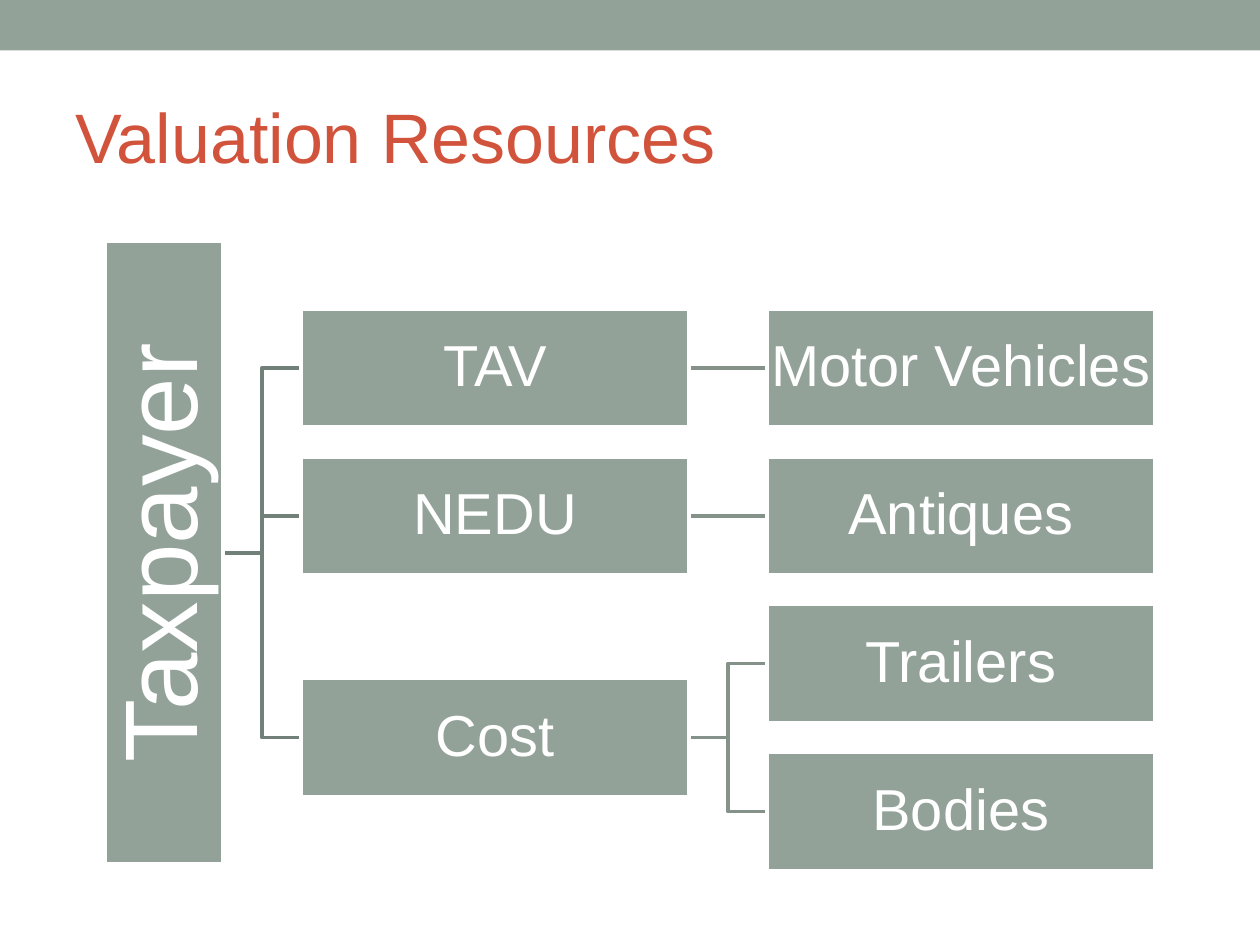
from lxml import etree
from pptx import Presentation
from pptx.dml.color import RGBColor
from pptx.enum.shapes import MSO_CONNECTOR, MSO_SHAPE
from pptx.enum.text import MSO_ANCHOR, PP_ALIGN
from pptx.oxml.ns import qn
from pptx.util import Cm, Pt

RECTANGLE = MSO_SHAPE.RECTANGLE
STRAIGHT, ELBOW = MSO_CONNECTOR.STRAIGHT, MSO_CONNECTOR.ELBOW
MIDDLE = MSO_ANCHOR.MIDDLE
LEFT, CENTER = PP_ALIGN.LEFT, PP_ALIGN.CENTER

SAGE = RGBColor(0x93, 0xA2, 0x99)
ROOT_LINE = RGBColor(0x71, 0x80, 0x79)
BRANCH_LINE = RGBColor(0x84, 0x92, 0x8A)
RUST = RGBColor(0xD2, 0x53, 0x3C)
WHITE = RGBColor(0xFF, 0xFF, 0xFF)
LINE_WIDTH = Pt(2.08)

ROOT = "Taxpayer"
BRANCHES = {
    "TAV": ["Motor Vehicles"],
    "NEDU": ["Antiques"],
    "Cost": ["Trailers", "Bodies"],
}

BOX_WIDTH, BOX_HEIGHT = 7.82, 2.38
ROOT_LENGTH = 12.55
GAP = 1.57
ROOT_RIGHT = 4.5
BRANCH_LEFT = ROOT_RIGHT + GAP
LEAF_LEFT = BRANCH_LEFT + BOX_WIDTH + GAP
FIRST_CENTER, ROW_STEP = 7.42, 2.98


def apply(target, values):
    """Set each named attribute of the target."""
    for name, value in values.items():
        setattr(target, name, value)


def write(frame, text, size, color, align, inset):
    """Fill a text frame with one formatted, vertically centred line."""
    margins = ("margin_left", "margin_right", "margin_top", "margin_bottom")
    apply(frame, dict.fromkeys(margins, Cm(inset)))
    apply(frame, {"text": text, "word_wrap": True, "vertical_anchor": MIDDLE})
    paragraph = frame.paragraphs[0]
    apply(paragraph, {"alignment": align, "line_spacing": 0.9})
    apply(paragraph.runs[0].font, {"name": "Arial", "size": Pt(size)})
    paragraph.runs[0].font.color.rgb = color


def add_panel(slide, left, top, width, height):
    """Add a flat sage rectangle without an outline."""
    panel = slide.shapes.add_shape(
        RECTANGLE, Cm(left), Cm(top), Cm(width), Cm(height))
    panel.shadow.inherit = False
    panel.fill.solid()
    panel.fill.fore_color.rgb = SAGE
    panel.line.fill.background()
    return panel


def add_node(slide, text, left, center, width=BOX_WIDTH, size=33, inset=0.05):
    """Add a labelled box whose middle lies at the given height."""
    node = add_panel(slide, left, center - BOX_HEIGHT / 2, width, BOX_HEIGHT)
    node.line.color.rgb = WHITE
    node.line.width = LINE_WIDTH
    write(node.text_frame, text, size, WHITE, CENTER, inset)
    return node


def add_link(slide, left, start, end, color):
    """Join a parent's height to a child's across one column gap."""
    kind = STRAIGHT if start == end else ELBOW
    link = slide.shapes.add_connector(
        kind, Cm(left), Cm(start), Cm(left + GAP), Cm(end))
    link.line.color.rgb = color
    link.line.width = LINE_WIDTH
    etree.SubElement(link._element.spPr, qn("a:effectLst"))


def add_title(slide, text):
    """Place and format the title placeholder."""
    title = slide.shapes.title
    apply(title, {"left": Cm(1.27), "top": Cm(1.47),
                  "width": Cm(22.86), "height": Cm(2.74)})
    write(title.text_frame, text, 40, RUST, LEFT, 0.25)


def add_tree(slide):
    """Draw the tree, centring each parent on its children."""
    leaf_row = 0
    leaf_centers, branch_centers = {}, {}
    for branch, leaves in BRANCHES.items():
        for leaf in leaves:
            leaf_centers[leaf] = FIRST_CENTER + leaf_row * ROW_STEP
            leaf_row += 1
        branch_centers[branch] = (
            leaf_centers[leaves[0]] + leaf_centers[leaves[-1]]) / 2
    heights = branch_centers.values()
    root_center = (min(heights) + max(heights)) / 2

    for branch, center in branch_centers.items():
        add_link(slide, ROOT_RIGHT, root_center, center, ROOT_LINE)
        for leaf in BRANCHES[branch]:
            add_link(slide, LEAF_LEFT - GAP, center, leaf_centers[leaf],
                     BRANCH_LINE)

    root_left = ROOT_RIGHT - (BOX_HEIGHT + ROOT_LENGTH) / 2
    root = add_node(slide, ROOT, root_left, root_center, ROOT_LENGTH, 59, 0.1)
    root.rotation = 270
    for branch, center in branch_centers.items():
        add_node(slide, branch, BRANCH_LEFT, center)
    for leaf, center in leaf_centers.items():
        add_node(slide, leaf, LEAF_LEFT, center)


def main():
    """Build and save the slide."""
    deck = Presentation()
    apply(deck, {"slide_width": Cm(25.4), "slide_height": Cm(19.05)})
    slide = deck.slides.add_slide(deck.slide_layouts[5])
    add_panel(slide, 0, 0, 25.4, 1.02)
    add_title(slide, "Valuation Resources")
    add_tree(slide)
    deck.save("out.pptx")


if __name__ == "__main__":
    main()
